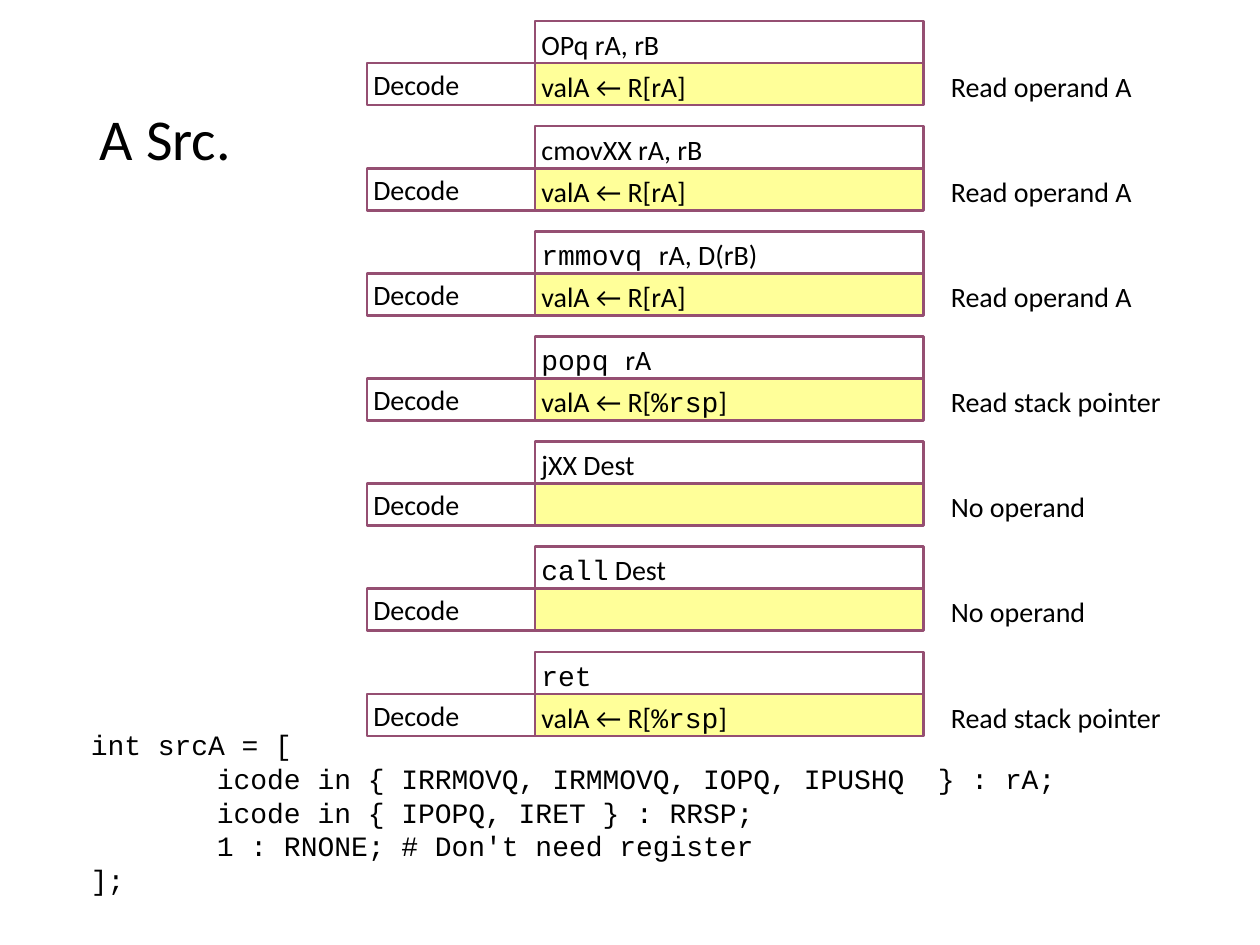
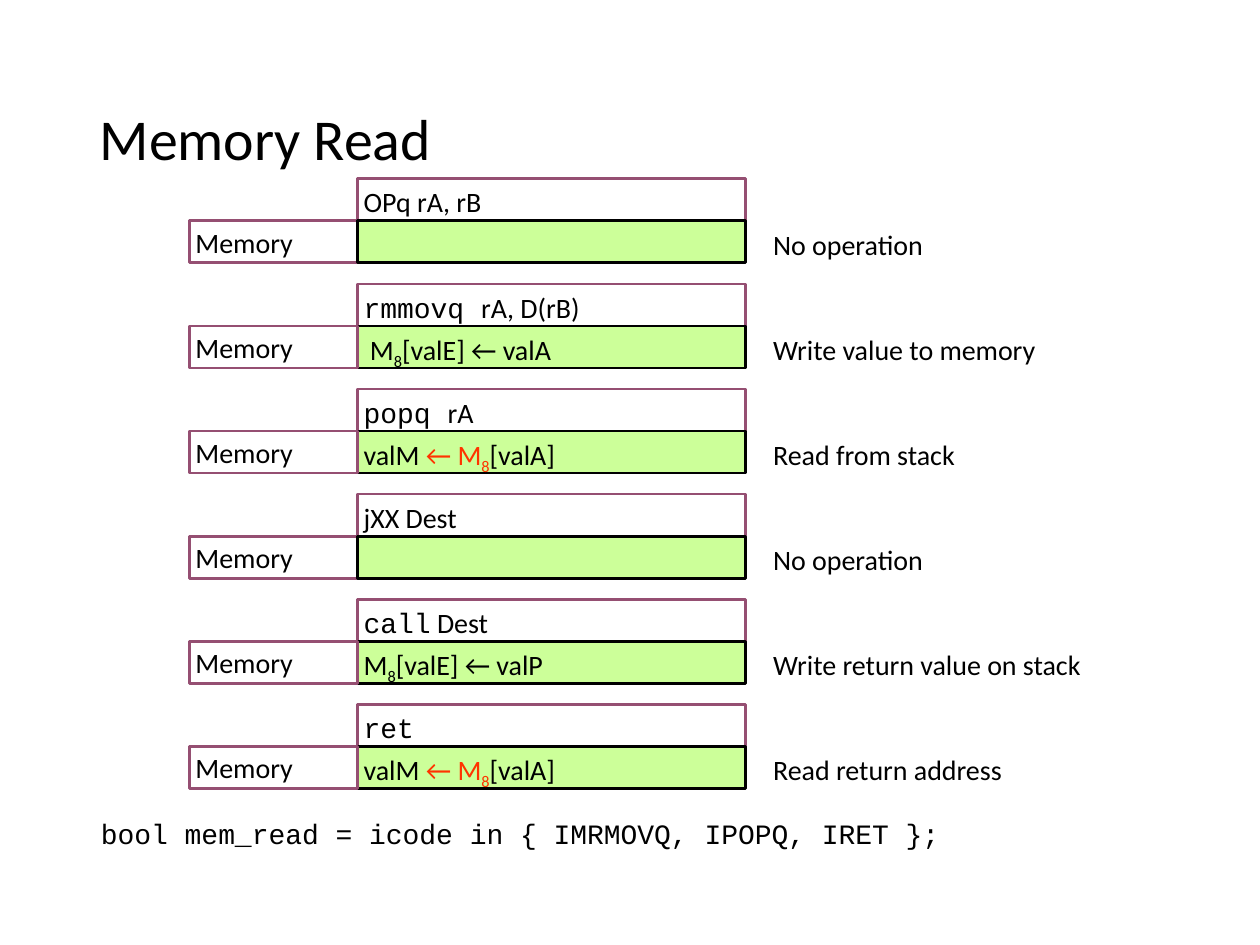
from pptx import Presentation
from pptx.dml.color import RGBColor
from pptx.enum.shapes import MSO_SHAPE as Shape
from pptx.enum.text import MSO_ANCHOR as Anchor, PP_ALIGN as Align
from pptx.util import Inches, Pt
from lxml.etree import SubElement
from pptx.oxml.ns import qn

INK = {"text": "000000", "edge": "954F72", "yellow": "FFFF99",
       "green": "CCFF99", "red": "FF3300"}
SANS, MONO = "Calibri", "Courier New"
WIDE, TALL = 9.99, 7.49
ROW = 1 / 3                # height of one cell
STEP = 2.5 * ROW           # two cells and half a cell of gap
STAGE, CELL, GAP = 4 * ROW, 3.08, ROW / 2
PAD = 0.05

# Rich text is a list of (text, style words) pairs.
HEADS = {
    "op": [("OPq rA, rB", "")],
    "cmov": [("cmovXX rA, rB", "")],
    "rmmov": [("rmmovq ", "mono"), ("rA, D(rB)", "")],
    "pop": [("popq ", "mono"), ("rA", "")],
    "jump": [("jXX Dest", "")],
    "call": [("call", "mono"), (" Dest", "")],
    "ret": [("ret", "mono")],
}
REG = [("valA ← R[rA]", "")]
STACK = [("valA ← R[", ""), ("%rsp", "mono"), ("]", "")]
LOAD = [("valM ", ""), ("← M", "red"), ("8", "red sub"), ("[valA]", "")]


def store(start, value):
    return [(start, ""), ("8", "sub"), (f"[valE] ← {value}", "")]


SLIDES = [
    dict(title="A Src.", stage="Decode", left=2.91, top=ROW / 2,
         fill="yellow", line="edge",
         rows=[("op", REG, "Read operand A"),
               ("cmov", REG, "Read operand A"),
               ("rmmov", REG, "Read operand A"),
               ("pop", STACK, "Read stack pointer"),
               ("jump", [], "No operand"),
               ("call", [], "No operand"),
               ("ret", STACK, "Read stack pointer")],
         code=["int srcA = [",
               "\ticode in { IRRMOVQ, IRMMOVQ, IOPQ, IPUSHQ  } : rA;",
               "\ticode in { IPOPQ, IRET } : RRSP;",
               "\t1 : RNONE; # Don't need register",
               "];"],
         spot=(0.67, 5.72, 8.75, 1.44)),
    dict(title="Memory Read", stage="Memory", left=1.5, top=4.25 * ROW,
         fill="green", line="text",
         rows=[("op", [], "No operation"),
               ("rmmov", store(" M", "valA"), "Write value to memory"),
               ("pop", LOAD, "Read from stack"),
               ("jump", [], "No operation"),
               ("call", store("M", "valP"), "Write return value on stack"),
               ("ret", LOAD, "Read return address")],
         code=["bool mem_read = icode in { IMRMOVQ, IPOPQ, IRET };"],
         spot=(0.75, 6.42, 8.75, 0.37)),
]


def rgb(name):
    return RGBColor.from_string(INK[name])


def style(run, words="", size=16):
    font = run.font
    font.size = Pt(size)
    font.name = MONO if "mono" in words else SANS
    font.color.rgb = rgb("red" if "red" in words else "text")
    if "sub" in words:
        run._r.get_or_add_rPr().set("baseline", "-25000")


def fit(frame, anchor=Anchor.TOP):
    frame.word_wrap = True
    frame.vertical_anchor = anchor
    frame.margin_left = frame.margin_right = Inches(PAD)
    frame.margin_top = frame.margin_bottom = Inches(PAD)


def write(para, rich):
    para.alignment = Align.LEFT
    for text, words in rich:
        run = para.add_run()
        run.text = text
        style(run, words)


def box(slide, spot, rich, line="edge", fill=None, anchor=Anchor.TOP):
    cell = slide.shapes.add_shape(Shape.RECTANGLE, *map(Inches, spot))
    cell.shadow.inherit = False
    cell.line.color.rgb = rgb(line)
    cell.line.width = Pt(1.5)
    if fill:
        cell.fill.solid()
        cell.fill.fore_color.rgb = rgb(fill)
    else:
        cell.fill.background()
    fit(cell.text_frame, anchor)
    write(cell.text_frame.paragraphs[0], rich)


def label(slide, spot, lines):
    """Add a text box with one rich paragraph per line and one-inch tabs."""
    frame = slide.shapes.add_textbox(*map(Inches, spot)).text_frame
    fit(frame)
    for i, rich in enumerate(lines):
        para = frame.add_paragraph() if i else frame.paragraphs[0]
        write(para, rich)
        if rich[0][0].startswith("\t"):
            tabs = SubElement(para._p.get_or_add_pPr(), qn("a:tabLst"))
            SubElement(tabs, qn("a:tab"), pos=str(Inches(1)), algn="l")


def head(slide, text):
    title = slide.shapes.title
    title.left, title.top = Inches(0.69), Inches(0.4)
    title.width, title.height = Inches(8.61), Inches(1.45)
    frame = title.text_frame
    frame.text = text
    frame.vertical_anchor = Anchor.MIDDLE
    para = frame.paragraphs[0]
    para.alignment = Align.LEFT
    para.line_spacing = 0.9
    style(para.runs[0], size=33)


def draw(slide, data):
    head(slide, data["title"])
    left = data["left"]
    mid = left + STAGE
    side = mid + CELL + GAP
    for i, (key, act, note) in enumerate(data["rows"]):
        top = data["top"] + i * STEP
        low = top + ROW
        box(slide, (mid, top, CELL, ROW), HEADS[key])
        parts = [
            dict(spot=(mid, low, CELL, ROW), rich=act,
                 line=data["line"], fill=data["fill"]),
            dict(spot=(left, low, STAGE, ROW), rich=[(data["stage"], "")],
                 anchor=Anchor.MIDDLE),
        ]
        # An empty cell lies over its stage box, a filled one under it.
        for part in parts if act else reversed(parts):
            box(slide, **part)
        label(slide, (side, low, min(CELL, WIDE - side), ROW), [[(note, "")]])
    label(slide, data["spot"], [[(text, "mono")] for text in data["code"]])


def main():
    deck = Presentation()
    deck.slide_width, deck.slide_height = Inches(WIDE), Inches(TALL)
    for data in SLIDES:
        draw(deck.slides.add_slide(deck.slide_layouts[5]), data)
    deck.save("out.pptx")


if __name__ == "__main__":
    main()
